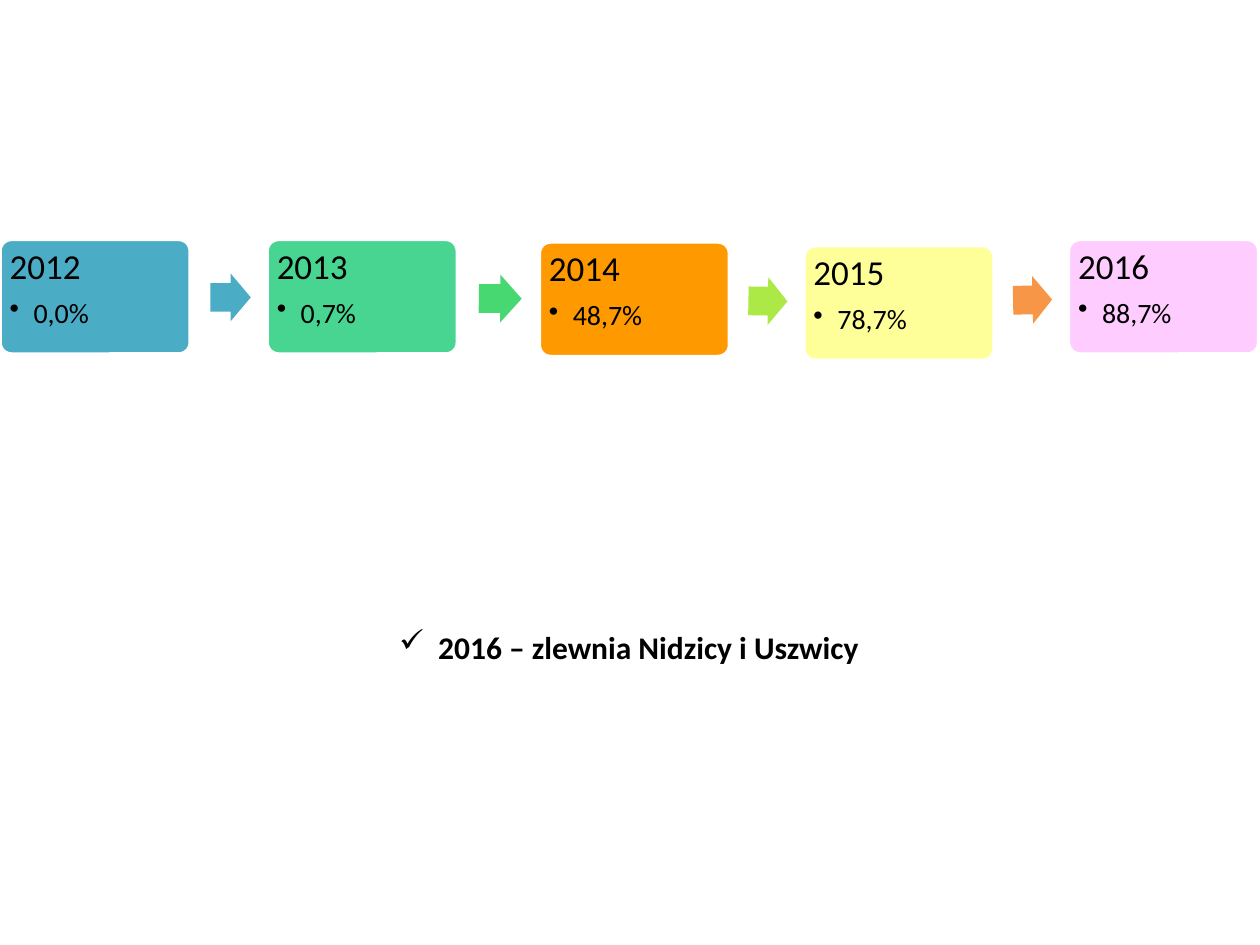
import lxml.etree
import pptx
import pptx.dml.color
import pptx.enum.shapes
import pptx.enum.text
import pptx.oxml.ns
import pptx.util

Inches, Pt = pptx.util.Inches, pptx.util.Pt
RGBColor = pptx.dml.color.RGBColor
SHAPE = pptx.enum.shapes.MSO_SHAPE
ANCHOR = pptx.enum.text.MSO_ANCHOR

BLACK = RGBColor(0x00, 0x00, 0x00)
WHITE = RGBColor(0xFF, 0xFF, 0xFF)
BLUE = RGBColor(0x4B, 0xAC, 0xC6)
MINT = RGBColor(0x48, 0xD4, 0x91)
GREEN = RGBColor(0x47, 0xD8, 0x72)
AMBER = RGBColor(0xFF, 0x99, 0x00)
LIME = RGBColor(0xAC, 0xE9, 0x46)
YELLOW = RGBColor(0xFF, 0xFF, 0x99)
ORANGE = RGBColor(0xF7, 0x96, 0x46)
PINK = RGBColor(0xFF, 0xCC, 0xFF)

YEARS = [
    ("2012", "0,0%", 0, 1.9, BLUE),
    ("2013", "0,7%", 2.12, 1.9, MINT),
    ("2014", "48,7%", 4.28, 1.92, AMBER),
    ("2015", "78,7%", 6.38, 1.95, YELLOW),
    ("2016", "88,7%", 8.48, 1.9, PINK),
]
ARROWS = [
    (1.67, 2.17, 0.32, 0, BLUE),
    (3.8, 2.18, 0.34, 0.3, GREEN),
    (5.94, 2.2, 0.31, 0.9, LIME),
    (8.04, 2.19, 0.31, 358.8, ORANGE),
]


class TimelineSlide:
    """Draws the parts of a yearly timeline on one slide in a shared style."""

    def __init__(self, slide, font_name="Calibri"):
        self.slide = slide
        self.font_name = font_name

    def set_text(self, paragraph, text, size, bold=False):
        paragraph.text = text
        paragraph.alignment = pptx.enum.text.PP_ALIGN.LEFT
        font = paragraph.font
        font.name, font.size, font.bold = self.font_name, Pt(size), bold
        font.color.rgb = BLACK

    def bullet(self, paragraph, mark, indent):
        properties = paragraph._p.get_or_add_pPr()
        properties.set("marL", str(Inches(indent)))
        properties.set("indent", str(-Inches(indent)))
        tag = pptx.oxml.ns.qn("a:buChar")
        lxml.etree.SubElement(properties, tag).set("char", mark)

    def block(self, kind, left, top, width, height, fill):
        block = self.slide.shapes.add_shape(
            kind, Inches(left), Inches(top), Inches(width), Inches(height))
        block.shadow.inherit = False
        block.fill.solid()
        block.fill.fore_color.rgb = fill
        return block

    def year(self, year, share, left, top, fill):
        card = self.block(SHAPE.ROUNDED_RECTANGLE, left, top, 1.51, 0.91, fill)
        card.adjustments[0] = 0.1
        card.line.color.rgb = WHITE
        card.line.width = Pt(2)
        frame = card.text_frame
        frame.word_wrap = True
        frame.vertical_anchor = ANCHOR.TOP
        frame.margin_left = frame.margin_right = Inches(0.05)
        frame.margin_top = frame.margin_bottom = Inches(0.05)
        heading, value = frame.paragraphs[0], frame.add_paragraph()
        value.level = 1
        self.bullet(value, "•", 0.19)
        self.set_text(heading, year, 20)
        self.set_text(value, share, 16)
        heading.line_spacing = value.line_spacing = 0.9
        heading.space_after = Pt(7)
        value.space_after = Pt(2.4)

    def arrow(self, left, top, width, rotation, fill):
        arrow = self.block(SHAPE.RIGHT_ARROW, left, top, width, 0.38, fill)
        arrow.adjustments[0] = 0.6
        arrow.adjustments[1] = 0.5
        arrow.line.fill.background()
        arrow.rotation = rotation

    def caption(self, text, left, top, width, height):
        box = self.slide.shapes.add_textbox(
            Inches(left), Inches(top), Inches(width), Inches(height))
        frame = box.text_frame
        frame.word_wrap = True
        frame.vertical_anchor = ANCHOR.BOTTOM
        catchments = frame.paragraphs[0]
        self.bullet(catchments, "✓", 0.31)
        self.set_text(catchments, text, 18, bold=True)


def main():
    deck = pptx.Presentation()
    deck.slide_width, deck.slide_height = Inches(10), Inches(7.5)
    timeline = TimelineSlide(deck.slides.add_slide(deck.slide_layouts[6]))
    timeline.caption("2016 – zlewnia Nidzicy i Uszwicy", 3.07, 4.32, 6.93, 1.01)
    for year in YEARS:
        timeline.year(*year)
    for arrow in ARROWS:
        timeline.arrow(*arrow)
    deck.save("out.pptx")


if __name__ == "__main__":
    main()
